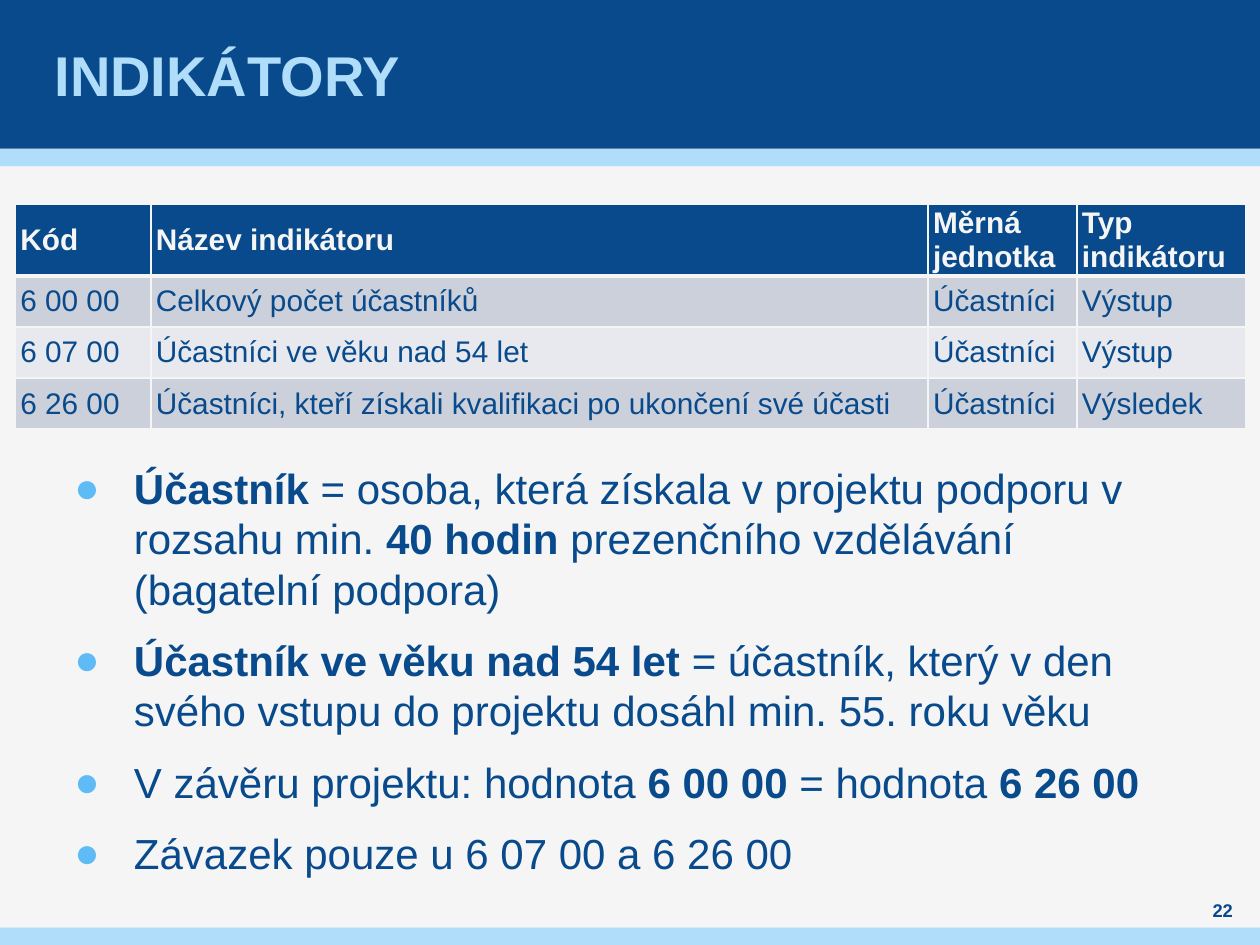
import pptx
import pptx.dml.color
import pptx.enum.shapes
import pptx.enum.text
import pptx.oxml
import pptx.oxml.ns
import pptx.util
from pptx.util import Cm, Pt

NAVY, SKY, PAPER, BULLET = "084A8B", "AFDDFA", "F5F5F5", "5FBBF5"
NS = pptx.oxml.ns.nsdecls("a")
MIDDLE = pptx.enum.text.MSO_ANCHOR.MIDDLE


def colour(hex_string):
    return pptx.dml.color.RGBColor.from_string(hex_string)


def add_run(paragraph, text, size, hex_string, bold=False):
    run = paragraph.add_run()
    run.text = text
    run.font.name = "Arial"
    run.font.size = Pt(size)
    run.font.bold = bold
    run.font.color.rgb = colour(hex_string)


deck = pptx.Presentation()
deck.slide_width, deck.slide_height = Cm(25.4), Cm(19.05)
slide = deck.slides.add_slide(deck.slide_layouts[1])
slide.background.fill.solid()
slide.background.fill.fore_color.rgb = colour(PAPER)
title, definitions = slide.placeholders

# Header and footer bands, behind the placeholders
for top, height, fill in [(3, 0.35, SKY), (0, 3, NAVY), (18.7, 0.35, SKY)]:
    band = slide.shapes.add_shape(
        pptx.enum.shapes.MSO_SHAPE.RECTANGLE, 0, Cm(top), deck.slide_width, Cm(height))
    band.shadow.inherit = False
    band.fill.solid()
    band.fill.fore_color.rgb = colour(fill)
    band.line.fill.background()
    title.element.addprevious(band.element)

# Title
title.left, title.top, title.width, title.height = Cm(1), Cm(0), Cm(23.4), Cm(3)
heading = title.text_frame
heading.auto_size = pptx.enum.text.MSO_AUTO_SIZE.NONE
heading.vertical_anchor = MIDDLE
heading.margin_left = heading.margin_right = Cm(0.1)
heading.margin_top = heading.margin_bottom = 0
heading.paragraphs[0].alignment = pptx.enum.text.PP_ALIGN.LEFT
add_run(heading.paragraphs[0], "INDIKÁTORY", 32, SKY, True)

# Bulleted definitions: (text, bold) runs
bullets = [
    [("Účastník ", True),
     ("= osoba, která získala v projektu podporu v rozsahu min. ", False),
     ("40 hodin ", True),
     ("prezenčního vzdělávání (bagatelní podpora)", False)],
    [("Účastník ve věku nad 54 let ", True),
     ("= účastník, který v den svého vstupu do projektu dosáhl min. 55. roku věku", False)],
    [("V závěru projektu: hodnota ", False), ("6 00 00", True),
     (" = hodnota ", False), ("6 26 00", True)],
    [("Závazek pouze u 6 07 00 a 6 26 00", False)],
]
definitions.left, definitions.top = Cm(1.5), Cm(9.32)
definitions.width, definitions.height = Cm(22.4), Cm(7.67)
body = definitions.text_frame
body.auto_size = pptx.enum.text.MSO_AUTO_SIZE.NONE
body.margin_left = body.margin_right = body.margin_top = body.margin_bottom = 0
for index, runs in enumerate(bullets):
    paragraph = body.add_paragraph() if index else body.paragraphs[0]
    paragraph.line_spacing = Pt(28.8)
    paragraph.space_before = Pt(6 if index else 0)
    paragraph.space_after = Pt(6)
    properties = paragraph._p.get_or_add_pPr()
    properties.set("marL", str(Cm(1.2)))
    properties.set("indent", str(-Cm(1.2)))
    for xml in (f'<a:buClr {NS}><a:srgbClr val="{BULLET}"/></a:buClr>',
                f'<a:buFont {NS} typeface="Arial"/>',
                f'<a:buChar {NS} char="●"/>'):
        properties.append(pptx.oxml.parse_xml(xml))
    for text, bold in runs:
        add_run(paragraph, text, 24, NAVY, bold)

# Slide number
number = slide.shapes.add_textbox(Cm(24), Cm(18.1), Cm(1.3), Cm(0.5)).text_frame
number.word_wrap = True
number.vertical_anchor = MIDDLE
number.margin_left = number.margin_right = number.margin_top = number.margin_bottom = 0
number.paragraphs[0].alignment = pptx.enum.text.PP_ALIGN.CENTER
add_run(number.paragraphs[0], "22", 10.5, NAVY, True)

# Indicator table
indicators = [
    ["Kód", "Název indikátoru", "Měrná jednotka", "Typ indikátoru"],
    ["6 00 00", "Celkový počet účastníků", "Účastníci", "Výstup"],
    ["6 07 00", "Účastníci ve věku nad 54 let", "Účastníci", "Výstup"],
    ["6 26 00", "Účastníci, kteří získali kvalifikaci po ukončení své účasti",
     "Účastníci", "Výsledek"],
]
row_fills = [NAVY, "CCD0DA", "E7E9EE", "CCD0DA"]
row_heights = [1.32, 1.03, 1.03, 1.03]
column_widths = [2.73, 15.67, 3, 3.4]
table = slide.shapes.add_table(
    len(indicators), len(column_widths), Cm(0.31), Cm(4.12),
    Cm(sum(column_widths)), Cm(sum(row_heights))).table
for column, width in zip(table.columns, column_widths):
    column.width = Cm(width)
for row_index, texts in enumerate(indicators):
    table.rows[row_index].height = Cm(row_heights[row_index])
    is_header = row_index == 0
    border_widths = {"lnL": 1, "lnR": 1, "lnT": 3 if row_index == 1 else 1,
                     "lnB": 3 if is_header else 1}
    for column_index, text in enumerate(texts):
        cell = table.cell(row_index, column_index)
        cell.fill.solid()
        cell.fill.fore_color.rgb = colour(row_fills[row_index])
        cell.vertical_anchor = MIDDLE
        cell.margin_left = Cm(0.1)
        cell.margin_right = cell.margin_top = cell.margin_bottom = 0
        add_run(cell.text_frame.paragraphs[0], text, 17,
                PAPER if is_header else NAVY, is_header)
        cell_properties = cell._tc.get_or_add_tcPr()
        for position, (side, width) in enumerate(border_widths.items()):
            cell_properties.insert(position, pptx.oxml.parse_xml(
                f'<a:{side} {NS} w="{Pt(width)}"><a:solidFill>'
                f'<a:srgbClr val="{PAPER}"/></a:solidFill></a:{side}>'))

deck.save("out.pptx")
